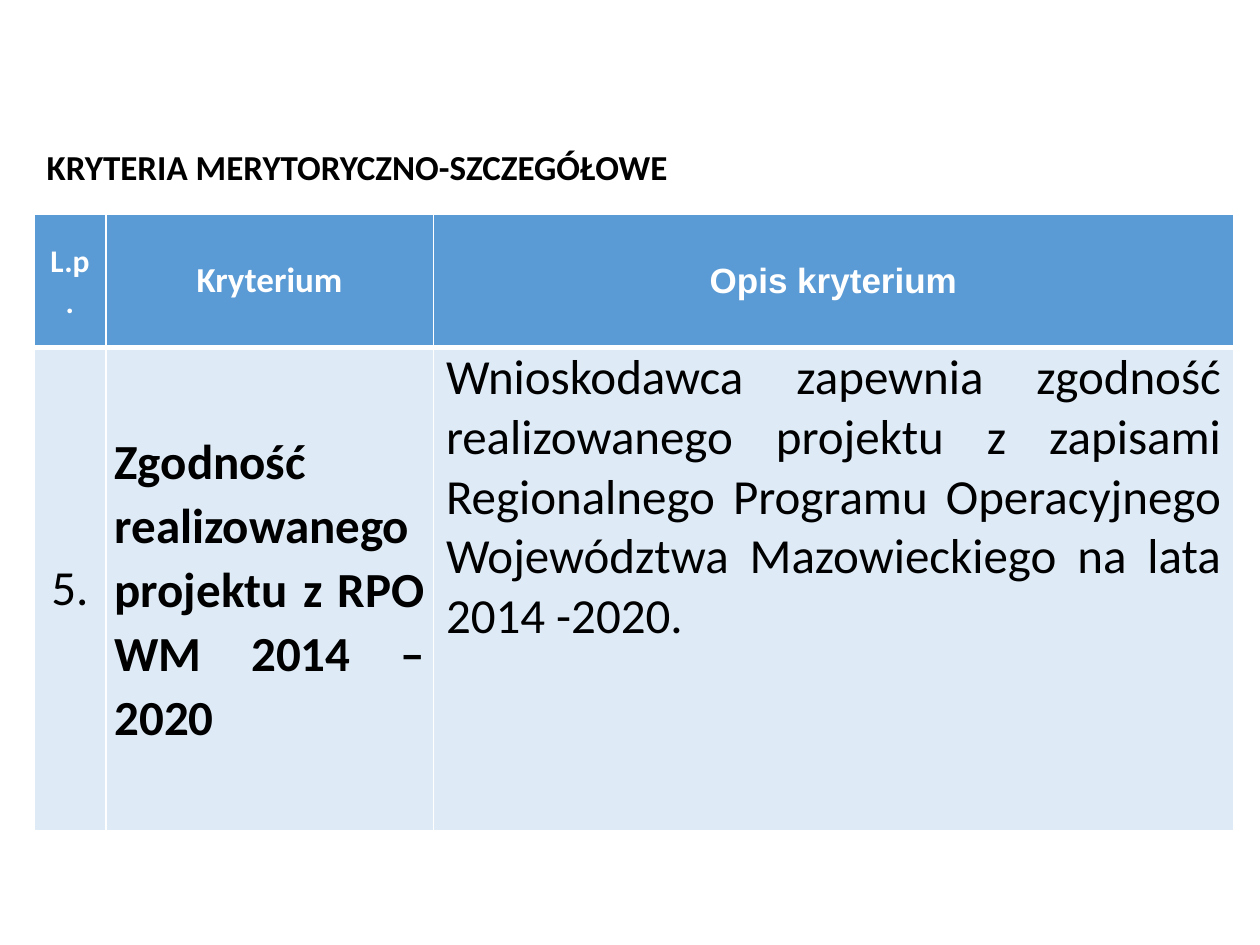
from lxml import etree
from pptx import Presentation
from pptx.dml.color import RGBColor
from pptx.enum import text
from pptx.oxml import ns
from pptx.util import Inches, Pt

COLORS = {"header": "5B9BD5", "body": "DEEBF7", "white": "FFFFFF", "black": "000000"}
COLUMN_WIDTHS = (0.57, 2.6, 6.35)
ROW_HEIGHTS = (1.06, 3.83)
CENTER, JUSTIFY = text.PP_ALIGN.CENTER, text.PP_ALIGN.JUSTIFY
MIDDLE, TOP = text.MSO_ANCHOR.MIDDLE, text.MSO_ANCHOR.TOP

HEADER = (
    dict(content="L.p.", size=18, spacing=1.07),
    dict(content="Kryterium", size=20),
    dict(content="Opis kryterium", size=20, font="Arial"),
)
CRITERION = (
    dict(content="5.", size=28),
    dict(content="Zgodność realizowanego projektu z RPO WM 2014 – 2020",
         size=28, bold=True, align=JUSTIFY, spacing=1.07),
    dict(content="Wnioskodawca zapewnia zgodność realizowanego projektu z zapisami "
                 "Regionalnego Programu Operacyjnego Województwa Mazowieckiego "
                 "na lata 2014 -2020.",
         size=28, align=JUSTIFY),
)


def write_text(frame, content, size, font="Calibri", color="black", bold=False,
               align=CENTER, spacing=1.0):
    paragraph = frame.paragraphs[0]
    paragraph.alignment = align
    paragraph.line_spacing = spacing
    run = paragraph.add_run()
    run.text = content
    run.font.name = font
    run.font.size = Pt(size)
    run.font.bold = bold
    run.font.color.rgb = RGBColor.from_string(COLORS[color])


def set_borders(cell, bottom):
    """Draw white cell borders, 1 pt except for the given bottom width."""
    properties = cell._tc.get_or_add_tcPr()
    widths = {"lnL": 1, "lnR": 1, "lnT": 1, "lnB": bottom}
    for index, (side, width) in enumerate(widths.items()):
        line = etree.Element(ns.qn(f"a:{side}"), w=str(Pt(width)))
        fill = etree.SubElement(line, ns.qn("a:solidFill"))
        etree.SubElement(fill, ns.qn("a:srgbClr"), val=COLORS["white"])
        properties.insert(index, line)


def format_cell(cell, fill, bottom=1, anchor=MIDDLE, side_margin=0.1, end_margin=0.05):
    cell.fill.solid()
    cell.fill.fore_color.rgb = RGBColor.from_string(COLORS[fill])
    cell.vertical_anchor = anchor
    cell.margin_left = cell.margin_right = Inches(side_margin)
    cell.margin_top = cell.margin_bottom = Inches(end_margin)
    set_borders(cell, bottom)


def add_title(slide, content):
    title = slide.shapes.title
    title.left, title.top = Inches(0.27), Inches(1.1)
    title.width, title.height = Inches(5.17), Inches(0.44)
    frame = title.text_frame
    frame.word_wrap = False
    frame.auto_size = text.MSO_AUTO_SIZE.SHAPE_TO_FIT_TEXT
    frame.vertical_anchor = MIDDLE
    write_text(frame, content, size=20, bold=True, align=text.PP_ALIGN.LEFT)


def add_criteria_table(slide):
    table = slide.shapes.add_table(
        len(ROW_HEIGHTS), len(COLUMN_WIDTHS), Inches(0.27), Inches(1.7),
        Inches(sum(COLUMN_WIDTHS)), Inches(sum(ROW_HEIGHTS))).table
    for column, width in zip(table.columns, COLUMN_WIDTHS):
        column.width = Inches(width)
    for row, height in zip(table.rows, ROW_HEIGHTS):
        row.height = Inches(height)

    for cell, entry in zip(table.rows[0].cells, HEADER):
        format_cell(cell, "header", bottom=3)
        write_text(cell.text_frame, color="white", bold=True, **entry)

    number, name, description = table.rows[1].cells
    format_cell(number, "body")
    format_cell(name, "body", side_margin=0.07, end_margin=0)
    format_cell(description, "body", anchor=TOP, end_margin=0)
    for cell, entry in zip((number, name, description), CRITERION):
        write_text(cell.text_frame, **entry)


def main():
    presentation = Presentation()
    presentation.slide_width, presentation.slide_height = Inches(10), Inches(7.5)
    slide = presentation.slides.add_slide(presentation.slide_layouts[5])
    add_criteria_table(slide)
    add_title(slide, "KRYTERIA MERYTORYCZNO-SZCZEGÓŁOWE")
    presentation.save("out.pptx")


if __name__ == "__main__":
    main()
